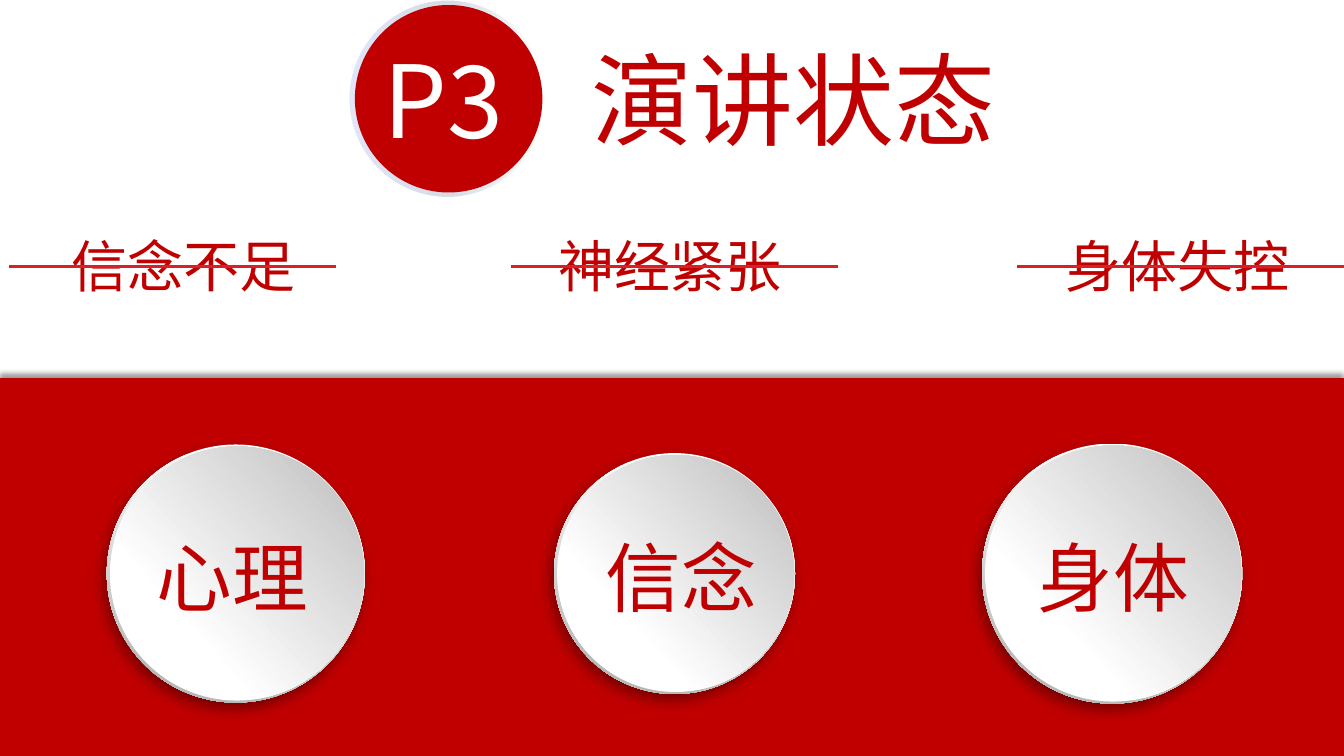
from lxml.etree import SubElement
from pptx import Presentation
from pptx.dml.color import RGBColor
from pptx.enum.shapes import MSO_CONNECTOR, MSO_SHAPE
from pptx.enum.text import PP_ALIGN
from pptx.oxml.ns import qn
from pptx.util import Inches, Pt

RED = RGBColor(0xC0, 0x00, 0x00)
STRIKE = RGBColor(0xD8, 0x20, 0x28)
WHITE = RGBColor(0xFF, 0xFF, 0xFF)
BLACK = RGBColor(0x00, 0x00, 0x00)
MIST = RGBColor(0xD6, 0xDC, 0xE5)
LILAC = RGBColor(0xE0, 0xE5, 0xF7)
GREY = RGBColor(0xB8, 0xB8, 0xB8)
SILVER = RGBColor(0xBF, 0xBF, 0xBF)


class Deck:
    font = "Noto Sans CJK SC"

    def __init__(self, slide):
        self.shapes = slide.shapes

    def shape(self, kind, left, top, width, height, color=None):
        item = self.shapes.add_shape(
            kind, Inches(left), Inches(top), Inches(width), Inches(height))
        item.shadow.inherit = False
        item.line.fill.background()
        if color is not None:
            item.fill.solid()
            item.fill.fore_color.rgb = color
        return item

    def circle(self, x, y, size, color=None):
        """Place a circle by its centre."""
        return self.shape(MSO_SHAPE.OVAL, x - size / 2, y - size / 2, size, size, color)

    def blend(self, item, angle, stops):
        """Fill with (percent, color) stops; the angle runs counter-clockwise."""
        item.fill.gradient()
        item.fill.gradient_angle = angle
        group = item._element.spPr.find(".//" + qn("a:gsLst"))
        for old in list(group):
            group.remove(old)
        for place, color in stops:
            stop = SubElement(group, qn("a:gs"), pos=str(place * 1000))
            SubElement(stop, qn("a:srgbClr"), val=str(color))

    def shade(self, item, alpha, blur, dist, angle):
        """Add an outer shadow; the angle runs clockwise."""
        effects = item._element.spPr.find(qn("a:effectLst"))
        outer = SubElement(
            effects, qn("a:outerShdw"), blurRad=str(Pt(blur)), dist=str(Pt(dist)),
            dir=str(angle * 60000), algn="ctr", rotWithShape="0")
        color = SubElement(outer, qn("a:srgbClr"), val=str(BLACK))
        SubElement(color, qn("a:alpha"), val=str(alpha * 1000))

    def disc(self, x, y, size):
        rim = self.circle(x, y, size)
        self.blend(rim, 253, [(17, WHITE), (88, GREY)])
        self.shade(rim, 39, 10, 5, 123)
        face = self.circle(x + 0.01, y, size - 0.04)
        self.blend(face, 42, [(29, WHITE), (98, SILVER)])

    def text(self, words, left, top, width, height, size, color=RED):
        box = self.shapes.add_textbox(
            Inches(left), Inches(top), Inches(width), Inches(height))
        box.text_frame.word_wrap = True
        para = box.text_frame.paragraphs[0]
        para.text = words
        para.alignment = PP_ALIGN.CENTER
        para.font.size = Pt(size)
        para.font.color.rgb = color
        para.font.name = self.font
        props = para._p.find(".//" + qn("a:defRPr"))
        SubElement(props, qn("a:ea"), typeface=self.font)

    def line(self, left, y, width):
        rule = self.shapes.add_connector(
            MSO_CONNECTOR.STRAIGHT, Inches(left), Inches(y),
            Inches(left + width), Inches(y))
        rule.line.color.rgb = STRIKE
        rule.line.width = Pt(2.25)
        SubElement(rule._element.spPr, qn("a:effectLst"))


def main():
    prs = Presentation()
    prs.slide_width, prs.slide_height = Inches(13.33), Inches(7.5)
    deck = Deck(prs.slides.add_slide(prs.slide_layouts[6]))

    ring = deck.circle(4.44, 0.98, 1.97)
    deck.blend(ring, 180, [(0, WHITE), (50, MIST), (100, LILAC)])
    ring.line.color.rgb = WHITE
    ring.line.width = Pt(1.5)
    deck.circle(4.45, 0.98, 1.86, RED)
    deck.text("演讲状态", 5.41, 0.33, 4.92, 1.3, 72)
    deck.text("P3", 3.6, 0.33, 1.59, 1.3, 72, WHITE)

    panel = deck.shape(MSO_SHAPE.RECTANGLE, 0, 3.75, 13.33, 3.75, RED)
    deck.shade(panel, 40, 4, 3, 270)

    goals = [("心理", 2.34, 2.56, 1.29), ("信念", 6.69, 2.39, 5.74),
             ("身体", 11.03, 2.58, 10.03)]
    for words, x, size, left in goals:
        deck.disc(x, 5.69, size)
        deck.text(words, left, 5.22, 2.03, 1, 54)

    faults = [("信念不足", 0.03, 3.58, 0.09), ("神经紧张", 4.74, 3.81, 5.07),
              ("身体失控", 10.03, 3.3, 10.09)]
    for words, left, width, start in faults:
        deck.text(words, left, 2.25, width, 0.77, 40)
        deck.line(start, 2.64, 3.24)

    prs.save("out.pptx")


if __name__ == "__main__":
    main()
